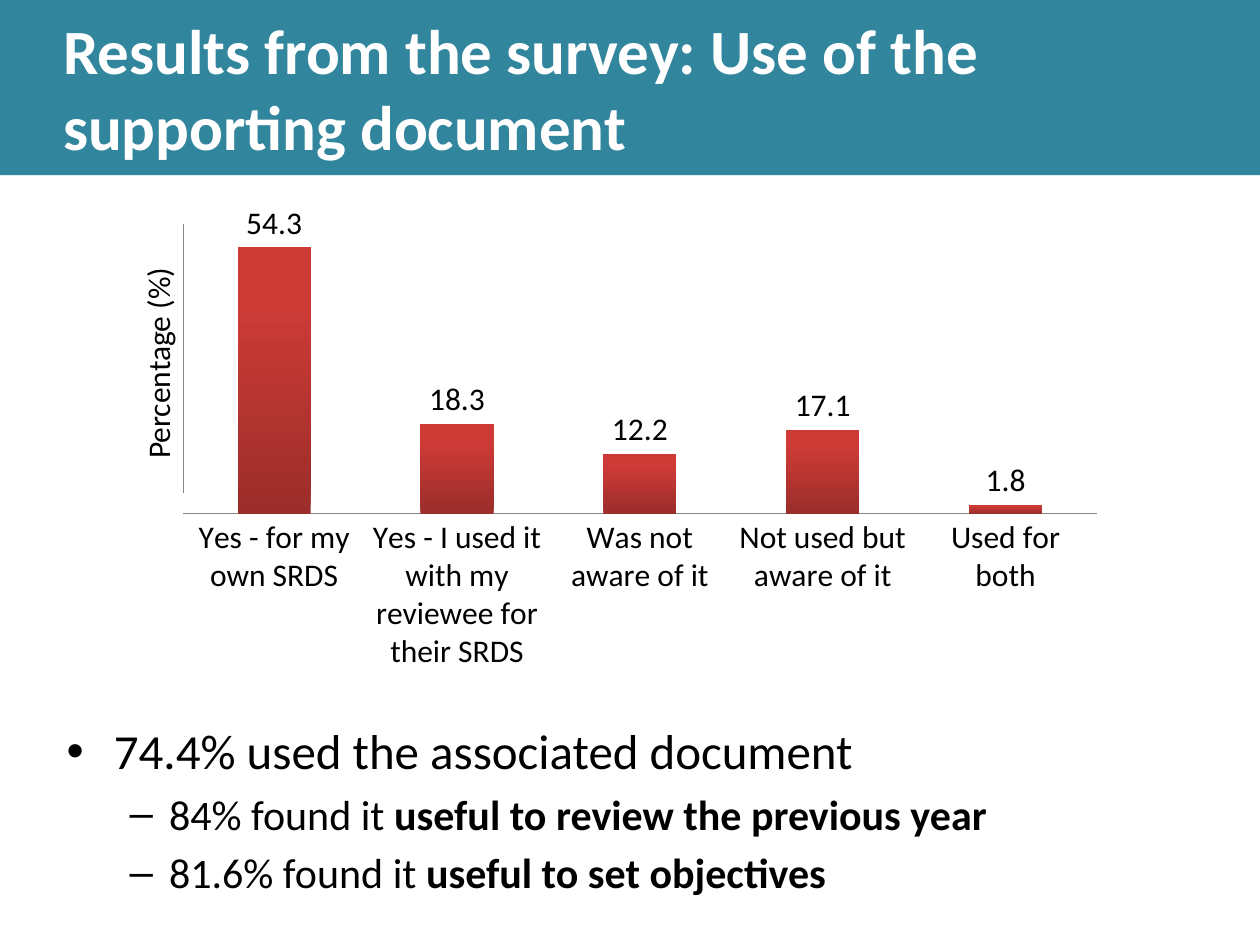
from lxml.etree import SubElement
from pptx import Presentation
from pptx.chart.data import CategoryChartData
from pptx.dml.color import RGBColor
from pptx.enum.chart import XL_CHART_TYPE, XL_LABEL_POSITION, XL_TICK_MARK
from pptx.enum.shapes import MSO_CONNECTOR
from pptx.enum.text import MSO_ANCHOR, MSO_AUTO_SIZE, PP_ALIGN
from pptx.oxml import parse_xml
from pptx.oxml.ns import nsdecls, qn
from pptx.util import Cm, Pt

COLORS = {"band": "31859C", "white": "FFFFFF", "text": "000000",
          "axis": "868686", "dark": "9B2D2A", "light": "CE3B37"}
HEAD = {"size": Pt(36), "bold": True, "name": "Calibri"}
BASE = {"size": Pt(18), "bold": False, "name": "Calibri"}


def rgb(key):
    return RGBColor.from_string(COLORS[key])


def style(font, values, color="text"):
    for name, value in values.items():
        setattr(font, name, value)
    font.color.rgb = rgb(color)


deck = Presentation()
deck.slide_width, deck.slide_height = Cm(25.4), Cm(19.05)
slide = deck.slides.add_slide(deck.slide_layouts[1])

# Title band
title = slide.shapes.title
title.left, title.top, title.width, title.height = Cm(0), Cm(0), Cm(25.4), Cm(3.53)
title.fill.solid()
title.fill.fore_color.rgb = rgb("band")
frame = title.text_frame
frame.text = "Results from the survey: Use of the supporting document"
for name, value in {"margin_left": Cm(1.27), "word_wrap": True,
                    "auto_size": MSO_AUTO_SIZE.NONE,
                    "vertical_anchor": MSO_ANCHOR.MIDDLE}.items():
    setattr(frame, name, value)
frame.paragraphs[0].alignment = PP_ALIGN.LEFT
style(frame.paragraphs[0].runs[0].font, HEAD, "white")

# Findings
body = slide.placeholders[1]
body.left, body.top, body.width, body.height = Cm(1.09), Cm(12.93), Cm(23.83), Cm(5.79)
frame = body.text_frame
frame.auto_size = MSO_AUTO_SIZE.NONE
frame.margin_top = Cm(1.6)
points = [
    (0, 28, "74.4% used the associated document", ""),
    (1, 24, "84% found it ", "useful to review the previous year"),
    (1, 24, "81.6% found it ", "useful to set objectives"),
]
for i, (level, size, plain, strong) in enumerate(points):
    para = frame.add_paragraph() if i else frame.paragraphs[0]
    para.level = level
    if i == 0:
        para.space_before = Pt(0)
    for text, bold in ((plain, False), (strong, True)):
        if text:
            run = para.add_run()
            run.text = text
            style(run.font, {**BASE, "size": Pt(size), "bold": bold})

# Column chart
data = CategoryChartData(number_format="General")
data.categories = ["Yes - for my own SRDS",
                   "Yes - I used it with my reviewee for their SRDS",
                   "Was not aware of it", "Not used but aware of it",
                   "Used for both"]
data.add_series("Series 1", (54.3, 18.3, 12.2, 17.1, 1.8))
chart = slide.shapes.add_chart(XL_CHART_TYPE.COLUMN_CLUSTERED, Cm(3.3), Cm(4.11),
                               Cm(19.2), Cm(9.6), data).chart
chart.has_legend = chart.has_title = False
style(chart.font, BASE)

scale = chart.value_axis
for name, value in {"visible": False, "has_major_gridlines": False,
                    "minimum_scale": 0, "maximum_scale": 60}.items():
    setattr(scale, name, value)
groups = chart.category_axis
groups.major_tick_mark = XL_TICK_MARK.NONE
groups.format.line.color.rgb = rgb("axis")
groups.format.line.width = Pt(0.75)

plot = chart.plots[0]
for name, value in {"gap_width": 150, "overlap": -25, "vary_by_categories": False,
                    "has_data_labels": True}.items():
    setattr(plot, name, value)
for name, value in {"show_value": True, "number_format": "#,##0.0",
                    "number_format_is_linked": False,
                    "position": XL_LABEL_POSITION.OUTSIDE_END}.items():
    setattr(plot.data_labels, name, value)
style(plot.data_labels.font, BASE)

fill = plot.series[0].format.fill
fill.gradient()
fill.gradient_angle = 90
for stop, key, place in zip(fill.gradient_stops, ("dark", "light"), (0, 0.8)):
    stop.color.rgb = rgb(key)
    stop.position = place

# Fixed plot area, as fractions of the chart
area = chart._chartSpace.chart.plotArea
for old in area.findall(qn("c:layout")):
    area.remove(old)
sides = {"x": 0.02, "y": 0.03, "w": 0.96, "h": 0.62}
parts = "".join(f'<c:{side}Mode val="edge"/>' for side in "xy")
parts += "".join(f'<c:{side} val="{value}"/>' for side, value in sides.items())
area.insert(0, parse_xml(
    f'<c:layout {nsdecls("c")}><c:manualLayout><c:layoutTarget val="inner"/>'
    f'{parts}</c:manualLayout></c:layout>'))

# Axis label and line
label = slide.shapes.add_textbox(Cm(0.97), Cm(6.78), Cm(4.42), Cm(1.02))
label.rotation = 270
frame = label.text_frame
frame.word_wrap = False
frame.auto_size = MSO_AUTO_SIZE.SHAPE_TO_FIT_TEXT
frame.text = "Percentage (%)"
style(frame.paragraphs[0].runs[0].font, BASE)

line = slide.shapes.add_connector(MSO_CONNECTOR.STRAIGHT, Cm(3.7), Cm(4.52),
                                  Cm(3.7), Cm(9.93))
line.line.color.rgb = rgb("axis")
line.line.width = Pt(0.75)
SubElement(line._element.spPr, qn("a:effectLst"))

deck.save("out.pptx")
